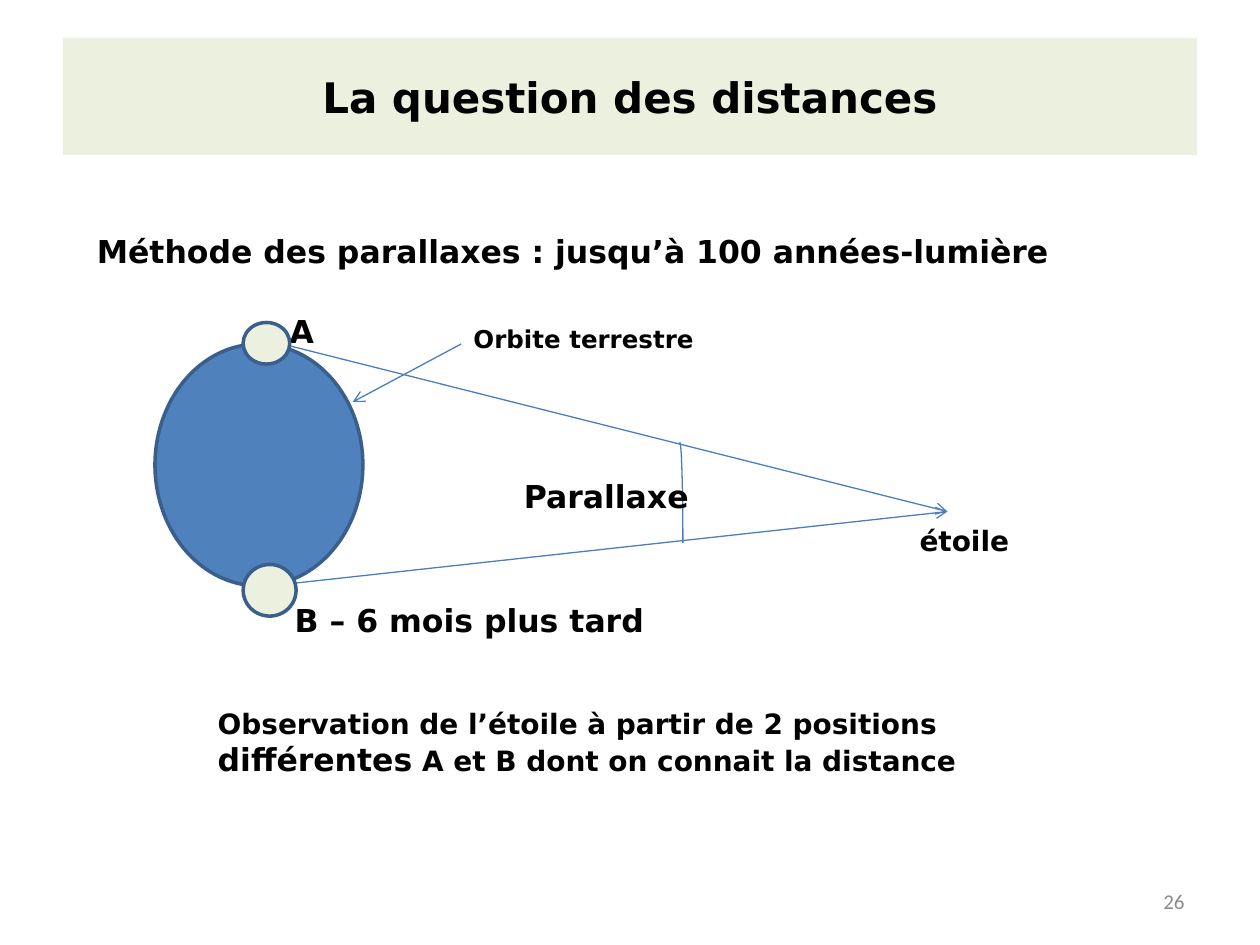
from lxml.etree import SubElement
from pptx import Presentation
from pptx.dml.color import RGBColor
from pptx.enum.shapes import MSO_CONNECTOR, MSO_SHAPE
from pptx.enum.text import MSO_ANCHOR, PP_ALIGN
from pptx.oxml.ns import qn
from pptx.util import Pt

PX = 9144  # 100 px to the inch
BLACK = RGBColor(0, 0, 0)
GRAY = RGBColor(0x8C, 0x8C, 0x8C)
PALE = RGBColor(0xEB, 0xF1, 0xDE)
BLUE = RGBColor(0x4F, 0x81, 0xBD)
EDGE = RGBColor(0x3A, 0x5F, 0x8C)
RAY = RGBColor(0x4B, 0x7E, 0xBC)
SANS = "DejaVu Sans"


def emu(*sizes):
    return [size * PX for size in sizes]


def style(run, size, color=BLACK, face=SANS, bold=True):
    font = run.font
    font.size, font.name, font.bold = Pt(size), face, bold
    font.color.rgb = color


def label(slide, box, text, size, wrap=True):
    frame = slide.shapes.add_textbox(*emu(*box)).text_frame
    frame.word_wrap = wrap
    frame.text = text
    style(frame.paragraphs[0].runs[0], size)
    return frame


def shape(slide, kind, box, fill=None, line=None, width=2):
    item = slide.shapes.add_shape(kind, *emu(*box))
    item.shadow.inherit = False
    if fill is None:
        item.fill.background()
    else:
        item.fill.solid()
        item.fill.fore_color.rgb = fill
    if line is None:
        item.line.fill.background()
    else:
        item.line.color.rgb = line
        item.line.width = Pt(width)
    return item


def arrow(slide, start, end):
    item = slide.shapes.add_connector(MSO_CONNECTOR.STRAIGHT, *emu(*start, *end))
    item.line.color.rgb = RAY
    item.line.width = Pt(0.75)
    props = item._element.spPr
    SubElement(props.find(qn("a:ln")), qn("a:tailEnd"), type="arrow")
    SubElement(props, qn("a:effectLst"))


def title(slide, box):
    frame = shape(slide, MSO_SHAPE.RECTANGLE, box, PALE).text_frame
    frame.text = "La question des distances"
    frame.vertical_anchor = MSO_ANCHOR.MIDDLE
    para = frame.paragraphs[0]
    para.alignment = PP_ALIGN.CENTER
    style(para.runs[0], 24)


def number(slide, box):
    frame = label(slide, box, "26", 12)
    frame.vertical_anchor = MSO_ANCHOR.MIDDLE
    para = frame.paragraphs[0]
    para.alignment = PP_ALIGN.RIGHT
    style(para.runs[0], 12, GRAY, "Calibri", False)


def diagram(slide, left, top):
    """Earth's orbit, its two positions and the rays to the star."""
    def at(x, y, *size):
        return left + x, top + y, *size

    star = at(632, 166)
    for start in (at(104, 33), at(94, 225)):
        arrow(slide, start, star)
    shape(slide, MSO_SHAPE.ARC, at(417, 111, 5, 160), line=RAY, width=0.75)

    for text, box, size, wrap in (
        ("étoile", at(600, 171, 173, 37), 16, True),
        ("A", at(100, 3, 40, 40), 18, False),
        ("B – 6 mois plus tard", at(104, 232, 304, 40), 18, False),
        ("Parallaxe", at(286, 134, 245, 40), 18, True),
        ("Orbite terrestre", at(246, 12, 213, 34), 14, True),
    ):
        label(slide, box, text, size, wrap)

    for box, fill in (
        (at(3, 33, 165, 192), BLUE),
        (at(73, 16, 37, 33), PALE),
        (at(73, 208, 42, 41), PALE),
    ):
        shape(slide, MSO_SHAPE.OVAL, box, fill, EDGE)
    arrow(slide, at(246, 33), at(160, 79))


def note(slide, box):
    frame = label(slide, box, "Observation de l’étoile à partir de 2 positions ", 16)
    para = frame.paragraphs[0]
    for text, size in (("différentes", 18),
                       (" A et B dont on connait la distance", 16)):
        run = para.add_run()
        run.text = text
        style(run, size)


def main():
    deck = Presentation()
    deck.slide_width, deck.slide_height = emu(1000, 750)
    slide = deck.slides.add_slide(deck.slide_layouts[6])
    title(slide, (50, 30, 900, 93))
    number(slide, (717, 695, 233, 40))
    label(slide, (67, 179, 866, 40),
          "Méthode des parallaxes : jusqu’à 100 années-lumière", 18)
    diagram(slide, 120, 240)
    note(slide, (163, 556, 650, 121))
    deck.save("out.pptx")


if __name__ == "__main__":
    main()
